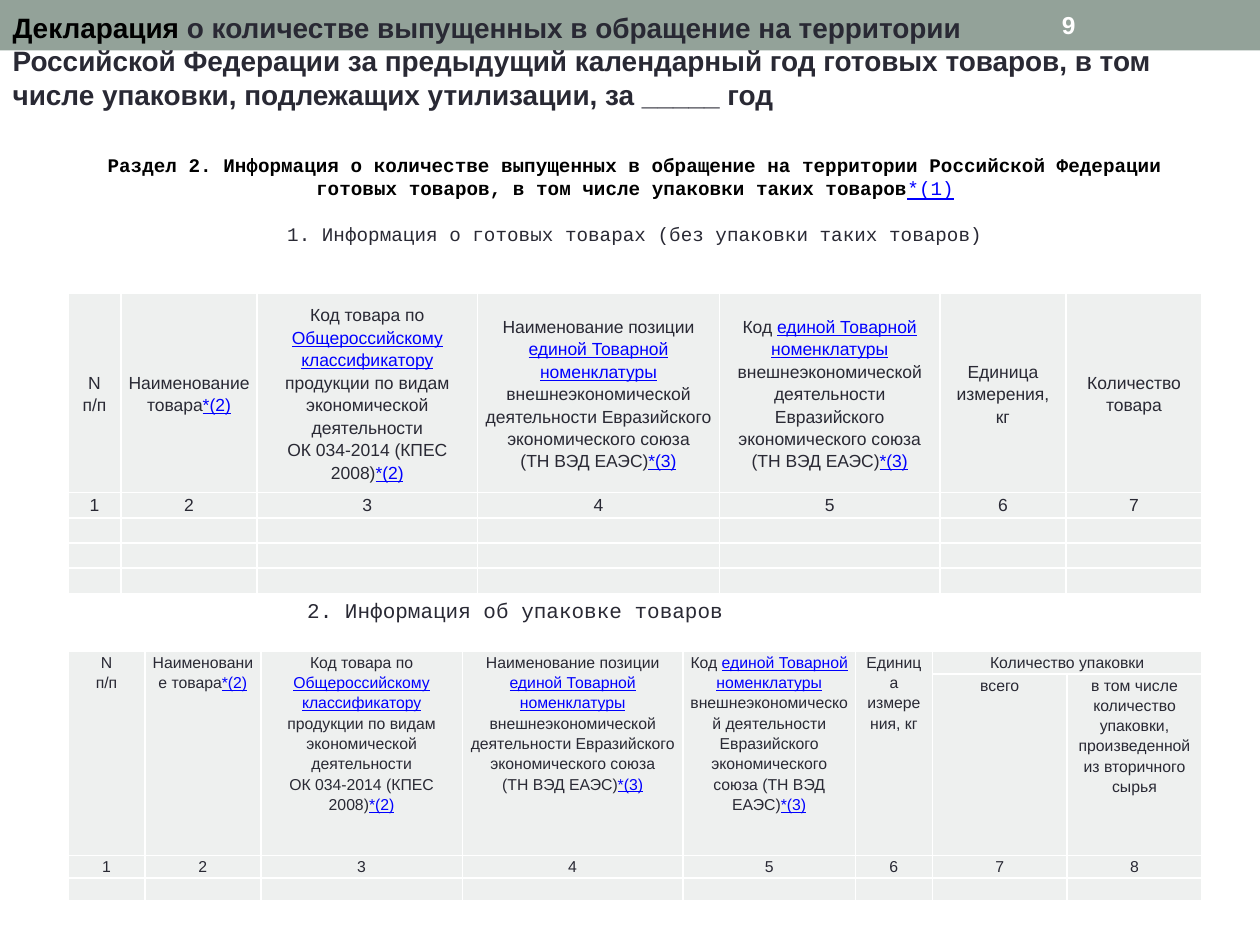
from copy import deepcopy

from lxml.etree import SubElement
from pptx import Presentation
from pptx.dml.color import RGBColor
from pptx.enum.shapes import MSO_SHAPE
from pptx.enum.text import MSO_ANCHOR, MSO_AUTO_SIZE, PP_ALIGN
from pptx.oxml.ns import qn
from pptx.util import Inches, Pt

SAGE = RGBColor(0x93, 0xA2, 0x99)
PALE = RGBColor(0xEE, 0xF0, 0xEF)
INK = RGBColor(0x29, 0x29, 0x34)
BLACK = RGBColor(0, 0, 0)
WHITE = RGBColor(0xFF, 0xFF, 0xFF)
LINK = RGBColor(0, 0, 0xFF)


def write(para, text, size=10, font="Arial", color=INK, bold=False,
          align=PP_ALIGN.LEFT, spacing=1.0):
    para.alignment = align
    para.line_spacing = spacing
    for order, part in enumerate(text.split("|")):
        is_link = order % 2 == 1
        for number, line in enumerate(part.split("\n")):
            if number:
                para.add_line_break()
                para._p[-1].append(deepcopy(span._r.rPr))
            span = para.add_run()
            span.text = line
            span.font.size = Pt(size)
            span.font.name = font
            span.font.bold = bold and not is_link
            span.font.underline = is_link
            span.font.color.rgb = LINK if is_link else color


def build_table(page, top, columns, heights, rows, size, header_anchor, merges=()):
    frame = page.shapes.add_table(len(heights), len(columns), Inches(0.54), Inches(top),
                                  Inches(sum(columns)), Inches(sum(heights)))
    table = frame.table
    table.first_row = False
    table.horz_banding = False
    for column, width in zip(table.columns, columns):
        column.width = Inches(width)
    for row, height in zip(table.rows, heights):
        row.height = Inches(height)
    for first_row, first_column, last_row, last_column in merges:
        table.cell(first_row, first_column).merge(table.cell(last_row, last_column))
    for row_index in range(len(heights)):
        for column_index in range(len(columns)):
            cell = table.cell(row_index, column_index)
            cell.margin_left = cell.margin_right = Inches(0.06)
            cell.margin_top = cell.margin_bottom = 0
            cell.vertical_anchor = header_anchor if row_index == 0 else MSO_ANCHOR.TOP
            para = cell.text_frame.paragraphs[0]
            text = rows[row_index][column_index] if row_index < len(rows) else ""
            if text:
                write(para, text, size=size, align=PP_ALIGN.CENTER, spacing=1.15)
            else:
                para._p.get_or_add_endParaRPr().set("sz", str(size * 100))
            properties = cell._tc.get_or_add_tcPr()
            for side in ("a:lnL", "a:lnR", "a:lnT", "a:lnB"):
                border = SubElement(properties, qn(side), w=str(Pt(1)))
                fill = SubElement(border, qn("a:solidFill"))
                SubElement(fill, qn("a:srgbClr"), val=str(WHITE))
            cell.fill.solid()
            cell.fill.fore_color.rgb = PALE


deck = Presentation()
deck.slide_width = Inches(10)
deck.slide_height = Inches(7.5)
page = deck.slides.add_slide(deck.slide_layouts[5])

bar = page.shapes.add_shape(MSO_SHAPE.RECTANGLE, 0, 0, Inches(10), Inches(0.4))
bar.shadow.inherit = False
bar.fill.solid()
bar.fill.fore_color.rgb = SAGE
bar.line.fill.background()
page.shapes._spTree.insert(2, bar._element)

title = page.shapes.title
title.left, title.top = Inches(0), Inches(0.03)
title.width, title.height = Inches(9.88), Inches(1.21)
title_text = title.text_frame
title_text.word_wrap = True
title_text.auto_size = MSO_AUTO_SIZE.NONE
title_text.vertical_anchor = MSO_ANCHOR.TOP
write(title_text.paragraphs[0], "Декларация ", size=16, color=BLACK, bold=True)
write(title_text.paragraphs[0], "о количестве выпущенных в обращение на территории",
      size=16, bold=True)
write(title_text.add_paragraph(),
      "Российской Федерации за предыдущий календарный год готовых товаров, в том числе "
      "упаковки, подлежащих утилизации, за _____ год", size=16, bold=True)

number_box = page.shapes.add_textbox(Inches(8.33), Inches(0.02), Inches(1.17), Inches(0.36))
number_box.text_frame.vertical_anchor = MSO_ANCHOR.MIDDLE
write(number_box.text_frame.paragraphs[0], "9", size=14, color=WHITE, bold=True)

section_box = page.shapes.add_textbox(Inches(0.2), Inches(1.17), Inches(9.68), Inches(1.03))
section_text = section_box.text_frame
section_text.word_wrap = True
section_style = {"size": 11, "font": "Courier New", "align": PP_ALIGN.CENTER}
write(section_text.paragraphs[0],
      "Раздел 2. Информация о количестве выпущенных в обращение на территории "
      "Российской Федерации", color=BLACK, bold=True, **section_style)
write(section_text.add_paragraph(),
      "готовых товаров, в том числе упаковки таких товаров|*(1)|",
      color=BLACK, bold=True, **section_style)
products_heading = section_text.add_paragraph()
products_heading.space_before = Pt(13)
write(products_heading, "1. Информация о готовых товарах (без упаковки таких товаров)",
      **section_style)

packaging_box = page.shapes.add_textbox(Inches(2.34), Inches(4.69), Inches(5), Inches(0.3))
packaging_box.text_frame.word_wrap = True
write(packaging_box.text_frame.paragraphs[0], "2. Информация об упаковке товаров",
      size=12, font="Courier New")

nomenclature = ("|единой Товарной номенклатуры| внешнеэкономической деятельности "
                "Евразийского экономического союза")
common_headers = [
    "N\nп/п",
    "Наименование товара|*(2)|",
    "Код товара по |Общероссийскому классификатору| продукции по видам экономической "
    "деятельности\nОК 034-2014 (КПЕС 2008)|*(2)|",
    f"Наименование позиции {nomenclature}\n(ТН ВЭД ЕАЭС)|*(3)|",
]
unit_header = "Единица измерения, кг"

build_table(
    page, 2.33, [0.42, 1.08, 1.75, 1.92, 1.75, 1, 1.08], [1.58] + [0.2] * 4,
    [common_headers + [f"Код {nomenclature}\n(ТН ВЭД ЕАЭС)|*(3)|", unit_header,
                       "Количество товара"],
     [str(number) for number in range(1, 8)]],
    size=10, header_anchor=MSO_ANCHOR.MIDDLE)

build_table(
    page, 5.17, [0.61, 0.92, 1.6, 1.75, 1.37, 0.61, 1.07, 1.07], [0.18, 1.44, 0.18, 0.18],
    [common_headers + [f"Код {nomenclature} (ТН ВЭД ЕАЭС)|*(3)|", unit_header,
                       "Количество упаковки", ""],
     [""] * 6 + ["всего", "в том числе количество упаковки, произведенной из "
                          "вторичного сырья"],
     [str(number) for number in range(1, 9)]],
    size=9, header_anchor=MSO_ANCHOR.TOP,
    merges=[(0, column, 1, column) for column in range(6)] + [(0, 6, 0, 7)])

deck.save("out.pptx")
